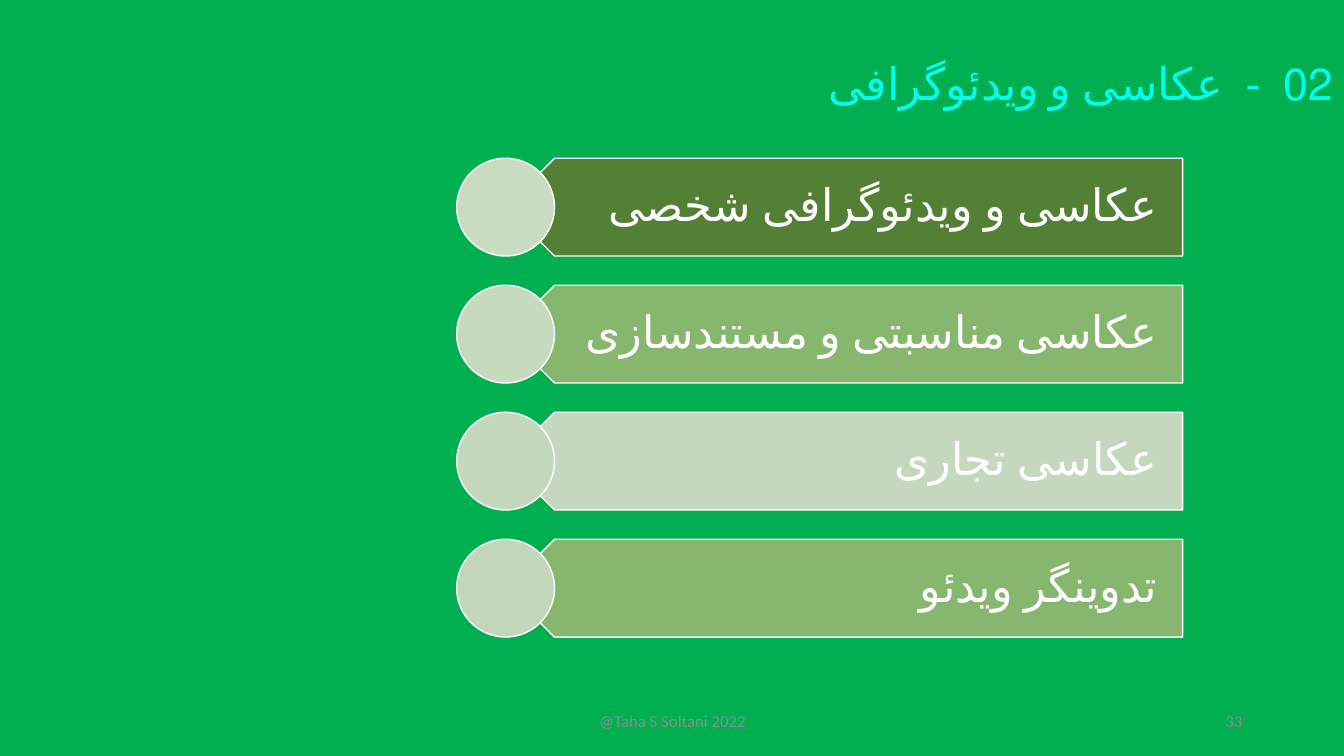
from pptx import Presentation
from pptx.dml.color import RGBColor
from pptx.enum.lang import MSO_LANGUAGE_ID as Language
from pptx.enum.shapes import MSO_SHAPE as Shape
from pptx.enum.text import MSO_ANCHOR as Anchor, MSO_AUTO_SIZE as AutoSize, PP_ALIGN as Align
from pptx.util import Inches, Pt

GREEN = RGBColor(0x00, 0xB0, 0x50)
CYAN = RGBColor(0x04, 0xFC, 0xF0)
WHITE = RGBColor(0xFF, 0xFF, 0xFF)
GRAY = RGBColor(0x8C, 0x8C, 0x8C)
DARK_OLIVE = RGBColor(0x53, 0x80, 0x35)
OLIVE = RGBColor(0x87, 0xB7, 0x6E)
PALE_OLIVE = RGBColor(0xC5, 0xD8, 0xBD)

# Topic, bar colour, circle colour
TOPICS = [
    ("عکاسی و ویدئوگرافی شخصی", DARK_OLIVE, RGBColor(0xC9, 0xDB, 0xC1)),
    ("عکاسی مناسبتی و مستندسازی", OLIVE, RGBColor(0xC6, 0xDA, 0xBE)),
    ("عکاسی تجاری", PALE_OLIVE, RGBColor(0xC4, 0xD8, 0xBC)),
    ("تدوینگر ویدئو", OLIVE, RGBColor(0xC2, 0xD7, 0xB9)),
]
ROW_HEIGHT = 0.97
ROW_PITCH = 1.26


def write_text(shape, text, size, color, align, anchor=Anchor.MIDDLE, rtl=False):
    frame = shape.text_frame
    frame.word_wrap = True
    frame.auto_size = AutoSize.NONE
    frame.vertical_anchor = anchor
    paragraph = frame.paragraphs[0]
    paragraph.text = text
    paragraph.alignment = align
    paragraph.font.name = "Calibri"
    paragraph.font.size = Pt(size)
    paragraph.font.color.rgb = color
    if rtl:
        # Persian text: right-to-left, with its language on the run
        paragraph.line_spacing = 0.9
        paragraph._p.get_or_add_pPr().set("rtl", "1")
        paragraph.runs[0].font.language_id = Language.FARSI


def add_text(slide, box, *args, **options):
    text_box = slide.shapes.add_textbox(*map(Inches, box))
    write_text(text_box, *args, **options)
    return text_box


def add_outlined_shape(slide, kind, box, fill):
    shape = slide.shapes.add_shape(kind, *map(Inches, box))
    shape.shadow.inherit = False
    shape.fill.solid()
    shape.fill.fore_color.rgb = fill
    shape.line.color.rgb = WHITE
    shape.line.width = Pt(1)
    return shape


def add_title(slide, left, top, width, height):
    title = slide.shapes.title
    title.left, title.top = Inches(left), Inches(top)
    title.width, title.height = Inches(width), Inches(height)
    write_text(title, "02  -  عکاسی و ویدئوگرافی", 32, CYAN, Align.RIGHT, Anchor.TOP, rtl=True)


def add_topic(slide, left, top, width, height, topic, bar_color, circle_color):
    # Bar pointing left, starting under the middle of the circle
    bar_left = left + height / 2
    bar_width = width - height / 2
    bar = add_outlined_shape(slide, Shape.PENTAGON, (bar_left, top, bar_width, height), bar_color)
    bar.rotation = 180

    # Label over the bar, clear of its point
    label_box = (bar_left + height / 4, top, bar_width - height / 4, height)
    label = add_text(slide, label_box, topic, 32, WHITE, Align.RIGHT, rtl=True)
    frame = label.text_frame
    frame.margin_left, frame.margin_right = Inches(0.43), Inches(0.25)
    frame.margin_top = frame.margin_bottom = Inches(0.13)

    add_outlined_shape(slide, Shape.OVAL, (left, top, height, height), circle_color)


def add_topic_list(slide, left, top, width):
    for index, topic in enumerate(TOPICS):
        add_topic(slide, left, top + index * ROW_PITCH, width, ROW_HEIGHT, *topic)


def add_footer(slide, left, top, width, height):
    number_width = 3
    credit_width = width - number_width - 0.5
    add_text(slide, (left, top, credit_width, height),
             "@Taha S Soltani 2022", 12, GRAY, Align.CENTER)
    add_text(slide, (left + width - number_width, top, number_width, height),
             "33", 12, GRAY, Align.RIGHT)


def main():
    presentation = Presentation()
    presentation.slide_width = Inches(13.33)
    presentation.slide_height = Inches(7.5)
    slide = presentation.slides.add_slide(presentation.slide_layouts[5])
    slide.background.fill.solid()
    slide.background.fill.fore_color.rgb = GREEN

    add_title(slide, 4.42, 0.56, 8.9, 1.4)
    add_topic_list(slide, 4.53, 1.57, 7.2)
    add_footer(slide, 4.42, 6.95, 8, 0.4)
    presentation.save("out.pptx")


if __name__ == "__main__":
    main()
